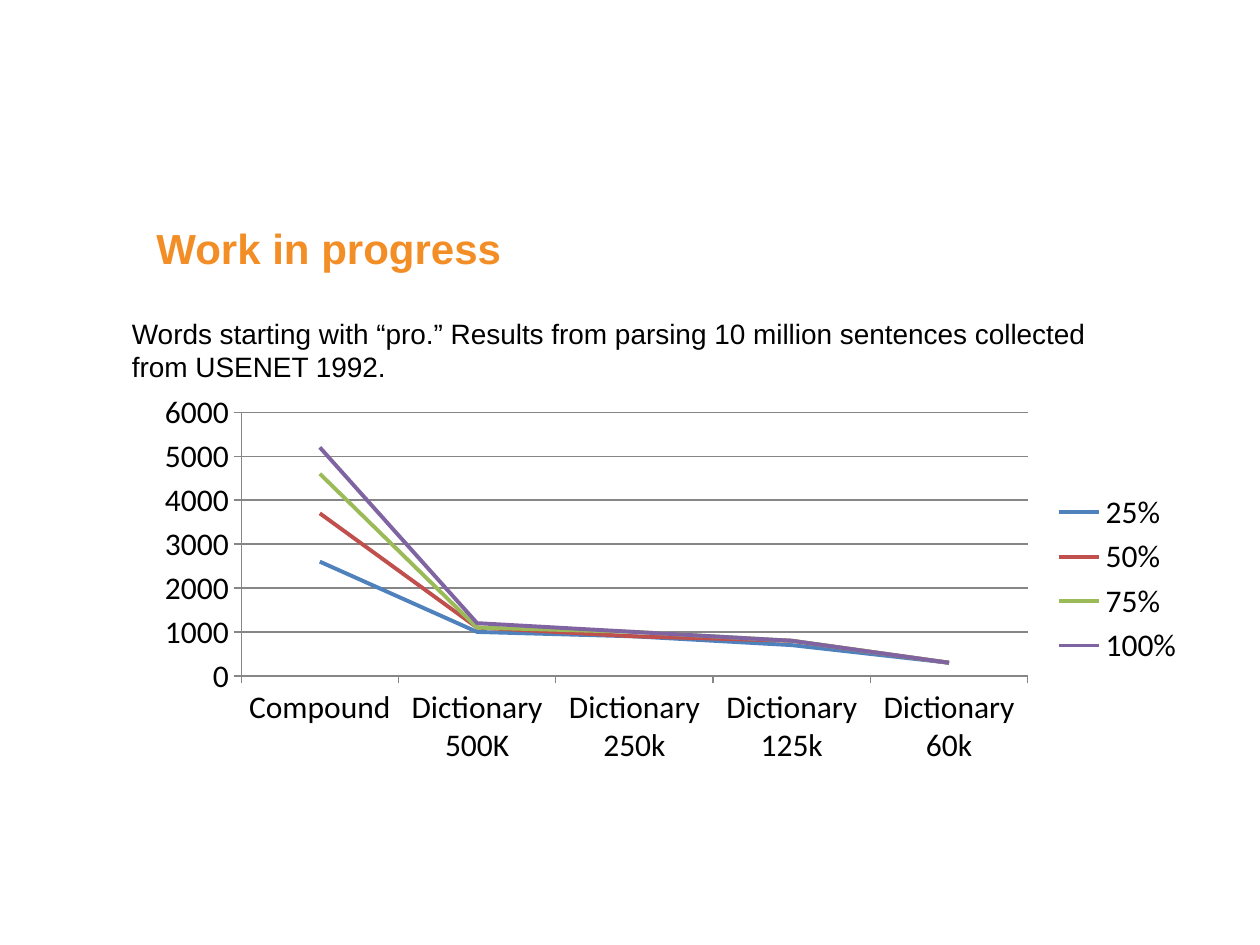
from pptx import Presentation
from pptx.chart.data import CategoryChartData
from pptx.dml.color import RGBColor
from pptx.enum.chart import XL_CHART_TYPE, XL_LEGEND_POSITION, XL_MARKER_STYLE, XL_TICK_MARK
from pptx.enum.text import MSO_ANCHOR, PP_ALIGN
from pptx.util import Cm, Pt

TITLE = "Work in progress"
CAPTION = ("Words starting with “pro.” Results from parsing 10 million sentences "
           "collected from USENET 1992.")
CATEGORIES = ["Compound", "Dictionary 500K", "Dictionary 250k", "Dictionary 125k", "Dictionary 60k"]
SERIES = {
    "25%": [2600, 1000, 900, 700, 300],
    "50%": [3700, 1100, 900, 800, 300],
    "75%": [4600, 1100, 1000, 800, 300],
    "100%": [5200, 1200, 1000, 800, 300],
}
COLOURS = {
    "title": "F38D26", "text": "000000", "axis": "868686",
    "25%": "4F81BD", "50%": "C0504D", "75%": "9BBB59", "100%": "8064A2",
}
LEFT, WIDTH = Cm(2.9), Cm(21.23)


def colour(name):
    return RGBColor.from_string(COLOURS[name])


def style_font(font, size, name, colour_name, bold=False):
    font.size, font.name, font.bold = Pt(size), name, bold
    font.color.rgb = colour(colour_name)


def style_line(line, colour_name, width):
    line.color.rgb = colour(colour_name)
    line.width = Pt(width)


def add_title(slide):
    title = slide.shapes.title
    title.left, title.top, title.width, title.height = LEFT, Cm(4.29), WIDTH, Cm(1.4)
    title.text_frame.text = TITLE
    title.text_frame.vertical_anchor = MSO_ANCHOR.MIDDLE
    paragraph = title.text_frame.paragraphs[0]
    paragraph.alignment = PP_ALIGN.LEFT
    style_font(paragraph.font, 24, "Arial", "title", bold=True)


def add_caption(slide):
    caption = slide.shapes.add_textbox(Cm(2.41), Cm(6.25), Cm(20.8), Cm(1.63))
    caption.text_frame.word_wrap = True
    caption.text_frame.text = CAPTION
    style_font(caption.text_frame.paragraphs[0].font, 16, "Arial", "text")


def add_line_chart(slide):
    data = CategoryChartData()
    data.categories = CATEGORIES
    for name, values in SERIES.items():
        data.add_series(name, values)
    chart = slide.shapes.add_chart(
        XL_CHART_TYPE.LINE, LEFT, Cm(7.77), WIDTH, Cm(7.8), data).chart
    style_font(chart.font, 18, "Calibri", "text")
    chart.has_title = False
    chart.has_legend = True
    chart.legend.position = XL_LEGEND_POSITION.RIGHT
    chart.legend.include_in_layout = False

    for axis in (chart.category_axis, chart.value_axis):
        axis.major_tick_mark = XL_TICK_MARK.OUTSIDE
        axis.minor_tick_mark = XL_TICK_MARK.NONE
        style_line(axis.format.line, "axis", 0.75)
    value_axis = chart.value_axis
    value_axis.minimum_scale, value_axis.maximum_scale = 0, 6000
    value_axis.major_unit = 1000
    value_axis.has_major_gridlines = True
    style_line(value_axis.major_gridlines.format.line, "axis", 0.75)

    chart.plots[0].vary_by_categories = False
    for series in chart.plots[0].series:
        series.smooth = False
        series.marker.style = XL_MARKER_STYLE.NONE
        style_line(series.format.line, series.name, 2.25)


def main():
    presentation = Presentation()
    presentation.slide_width, presentation.slide_height = Cm(25.4), Cm(19.05)
    title_only = presentation.slide_layouts[5]
    slide = presentation.slides.add_slide(title_only)
    add_title(slide)
    add_line_chart(slide)
    add_caption(slide)
    presentation.save("out.pptx")


if __name__ == "__main__":
    main()
